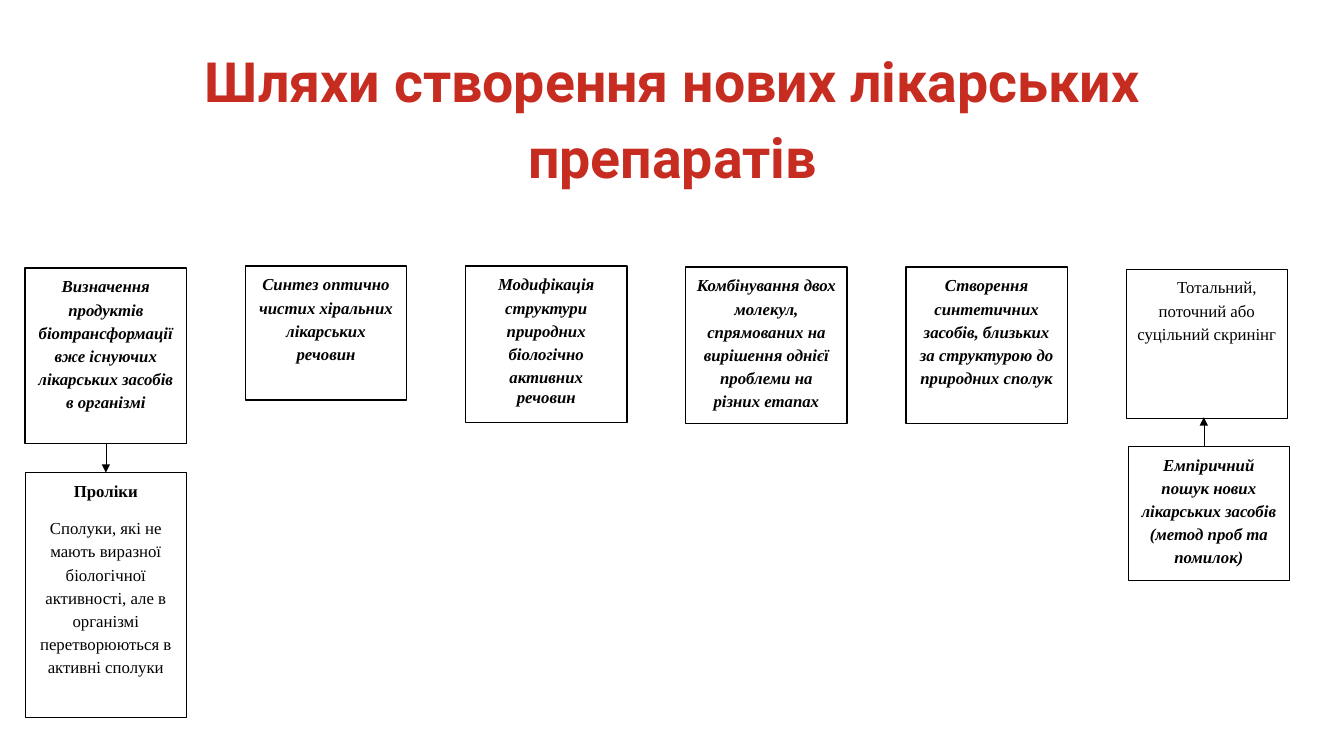
from lxml import etree
from pptx import Presentation
from pptx.dml.color import RGBColor
from pptx.enum.shapes import MSO_CONNECTOR, MSO_SHAPE
from pptx.enum.text import MSO_ANCHOR, MSO_AUTO_SIZE, PP_ALIGN
from pptx.oxml.ns import qn
from pptx.util import Inches, Pt

RECT = MSO_SHAPE.RECTANGLE
STRAIGHT = MSO_CONNECTOR.STRAIGHT
TOP, MIDDLE = MSO_ANCHOR.TOP, MSO_ANCHOR.MIDDLE
CENTER = PP_ALIGN.CENTER
NO_FIT = MSO_AUTO_SIZE.NONE
TITLE_ONLY = 5
TOP_SIDE, BOTTOM_SIDE = 0, 2


class Deck:
    colors = {"title": "C72C21", "ink": "000000", "paper": "FFFFFF"}
    title_font, body_font = "Roboto", "Times New Roman"
    margin, column, box_width = 0.25, 2.184, 1.6

    def __init__(self):
        self.prs = Presentation()
        self.prs.slide_width, self.prs.slide_height = Inches(13.33), Inches(7.5)
        self.s = self.prs.slides.add_slide(self.prs.slide_layouts[TITLE_ONLY])

    def color(self, name):
        return RGBColor.from_string(self.colors[name])

    def format(self, p, font, size, color, bold=False, italic=False, spacing=1.15, after=10):
        p.alignment = CENTER
        p.line_spacing = spacing
        p.space_after = Pt(after)
        p.font.name, p.font.size = font, Pt(size)
        p.font.bold, p.font.italic = bold, italic
        p.font.color.rgb = self.color(color)

    def title(self, text):
        sp = self.s.shapes.title
        sp.left, sp.top, sp.width, sp.height = (Inches(v) for v in (0.92, 0.4, 11.5, 1.45))
        tf = sp.text_frame
        tf.auto_size, tf.vertical_anchor, tf.word_wrap = NO_FIT, MIDDLE, True
        tf.text = text
        self.format(tf.paragraphs[0], self.title_font, 39.6, "title", bold=True)

    def box(self, col, top, height, paragraphs, line=1, shift=0, indent=0):
        left = self.margin + col * self.column + shift
        sp = self.s.shapes.add_shape(
            RECT, Inches(left), Inches(top), Inches(self.box_width), Inches(height))
        sp.shadow.inherit = False
        sp.fill.solid()
        sp.fill.fore_color.rgb = self.color("paper")
        sp.line.color.rgb = self.color("ink")
        sp.line.width = Pt(line)
        tf = sp.text_frame
        tf.word_wrap, tf.vertical_anchor = True, TOP
        for i, (text, style) in enumerate(paragraphs):
            p = tf.paragraphs[0] if i == 0 else tf.add_paragraph()
            p.text = text
            if indent:
                p._p.get_or_add_pPr().set("indent", str(Inches(indent)))
            self.format(p, self.body_font, 12, "ink", **style)
        return sp

    def arrow(self, x, start, end):
        c = self.s.shapes.add_connector(
            STRAIGHT, Inches(x), Inches(start), Inches(x), Inches(end))
        c.line.color.rgb = self.color("ink")
        c.line.width = Pt(0.25)
        etree.SubElement(c.line._get_or_add_ln(), qn("a:tailEnd"), type="triangle")
        etree.SubElement(c._element.spPr, qn("a:effectLst"))
        return c


def main():
    deck = Deck()
    deck.title("Шляхи створення нових лікарських препаратів")

    accent = {"bold": True, "italic": True}
    tight = {**accent, "after": 0}
    methods = [
        (2.66, 1.74, [("Визначення продуктів біотрансформації вже існуючих "
                       "лікарських засобів в організмі", accent)]),
        (2.64, 1.33, [("Синтез оптично чистих хіральних лікарських речовин", accent)]),
        (2.64, 1.55, [("Модифікація структури природних біологічно активних", tight),
                      ("речовин", {**tight, "spacing": 1.0})]),
        (2.65, 1.55, [("Комбінування двох молекул, спрямованих на вирішення "
                       "однієї проблеми на різних етапах", accent)]),
        (2.65, 1.55, [("Створення синтетичних засобів, близьких за структурою "
                       "до природних сполук", accent)]),
    ]
    boxes = [deck.box(col, *method) for col, method in enumerate(methods)]

    deck.box(5, 2.67, 1.48, [("Тотальний, поточний або суцільний скринінг", {})],
             line=0.75, indent=0.2)
    deck.box(5, 4.43, 1.33, [("Емпіричний пошук нових лікарських засобів "
                              "(метод проб та помилок)", accent)], shift=0.02)
    prodrugs = deck.box(0, 4.69, 2.43, [
        ("Проліки", {"bold": True}),
        ("Сполуки, які не мають виразної біологічної активності, але в організмі "
         "перетворюються в активні сполуки", {}),
    ], line=0.75)

    deck.arrow(11.94, 4.43, 4.14)
    down = deck.arrow(1.05, 4.4, 4.69)
    down.begin_connect(boxes[0], BOTTOM_SIDE)
    down.end_connect(prodrugs, TOP_SIDE)

    deck.prs.save("out.pptx")


if __name__ == "__main__":
    main()
